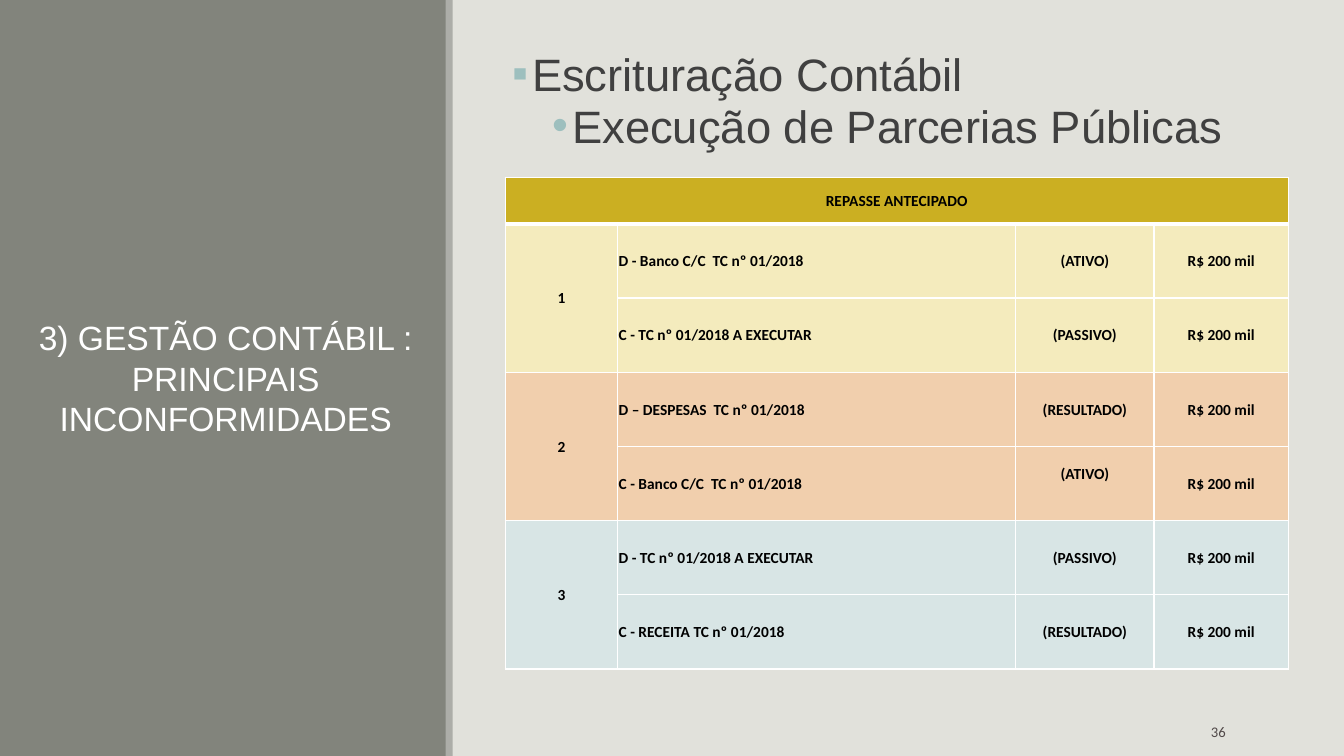
from lxml import etree
from pptx import Presentation
from pptx.dml.color import RGBColor
from pptx.enum.shapes import MSO_SHAPE
from pptx.enum.text import MSO_ANCHOR, PP_ALIGN
from pptx.oxml.ns import qn
from pptx.util import Cm, Pt

RECTANGLE = MSO_SHAPE.RECTANGLE
TOP, MIDDLE = MSO_ANCHOR.TOP, MSO_ANCHOR.MIDDLE
LEFT, CENTER, RIGHT = PP_ALIGN.LEFT, PP_ALIGN.CENTER, PP_ALIGN.RIGHT
JUSTIFY = PP_ALIGN.JUSTIFY

COLUMN_WIDTHS = [2.84, 10.03, 3.48, 3.39]
HEADER_HEIGHT, ENTRY_HEIGHT = 1.17, 1.87
AMOUNT = "R$ 200 mil"
GROUPS = [
    ("F4EBBD", [("D - Banco C/C  TC nº 01/2018", "(ATIVO)"),
                ("C - TC nº 01/2018 A EXECUTAR", "(PASSIVO)")]),
    ("F1CFAD", [("D – DESPESAS  TC nº 01/2018", "(RESULTADO)"),
                ("C - Banco C/C  TC nº 01/2018", "(ATIVO)")]),
    ("D8E5E5", [("D - TC nº 01/2018 A EXECUTAR", "(PASSIVO)"),
                ("C - RECEITA TC nº 01/2018", "(RESULTADO)")]),
]
RAISED_ROW, RAISED_COLUMN = 4, 2


def color(hex_value):
    """Turn a hex string into a colour."""
    return RGBColor.from_string(hex_value)


def style(paragraph, font_name, size, hex_value, align, bold=False):
    """Set the font and alignment of a paragraph."""
    paragraph.alignment = align
    font = paragraph.font
    font.name, font.size, font.bold = font_name, Pt(size), bold
    font.color.rgb = color(hex_value)


def add_panel(slide, left, top, width, height, fill):
    """Add a plain filled rectangle."""
    panel = slide.shapes.add_shape(RECTANGLE, Cm(left), Cm(top), Cm(width), Cm(height))
    panel.shadow.inherit = False
    panel.fill.solid()
    panel.fill.fore_color.rgb = color(fill)
    panel.line.fill.background()


def add_text_frame(slide, left, top, width, height, anchor):
    """Add a wrapping text box and return its text frame."""
    frame = slide.shapes.add_textbox(Cm(left), Cm(top), Cm(width), Cm(height)).text_frame
    frame.word_wrap = True
    frame.vertical_anchor = anchor
    return frame


def add_sidebar(slide, left, top, width, height):
    """Add the dark side panel with its edge strip and title."""
    add_panel(slide, left, top, width, height, "82847C")
    add_panel(slide, left + width - 0.02, top, 0.18, height, "ACADA8")
    frame = add_text_frame(slide, left + 0.69, top + 1.68, width - 1.25, height - 3.38, MIDDLE)
    title = frame.paragraphs[0]
    title.text = "3) GESTÃO CONTÁBIL : PRINCIPAIS INCONFORMIDADES"
    style(title, "Arial", 24, "FFFFFF", CENTER)


def add_bullet(paragraph, symbol, indent):
    """Give a paragraph a coloured bullet with a hanging indent."""
    properties = paragraph._p.get_or_add_pPr()
    properties.set("marL", str(Cm(indent)))
    properties.set("indent", str(Cm(-0.5)))
    bullet_color = etree.SubElement(properties, qn("a:buClr"))
    etree.SubElement(bullet_color, qn("a:srgbClr"), val="9DBFBE")
    etree.SubElement(properties, qn("a:buFont"), typeface="Arial")
    etree.SubElement(properties, qn("a:buChar"), char=symbol)


def add_headings(slide, left, top, width, height):
    """Add the two bulleted heading lines."""
    frame = add_text_frame(slide, left, top, width, height, TOP)
    frame.margin_left = frame.margin_right = 0
    headings = [("Escrituração Contábil", "▪", 1.07, 1),
                ("Execução de Parcerias Públicas", "•", 2.08, 3)]
    for index, (wording, symbol, indent, level) in enumerate(headings):
        heading = frame.add_paragraph() if index else frame.paragraphs[0]
        heading.text = wording
        heading.level = level - 1
        heading.line_spacing = 0.8
        heading.space_before, heading.space_after = Pt(2), Pt(4)
        style(heading, "Arial", 32.4, "404040", JUSTIFY)
        add_bullet(heading, symbol, indent)


def add_border(cell, side, points):
    """Draw one white border of a cell."""
    border = etree.SubElement(cell._tc.get_or_add_tcPr(), qn("a:" + side), w=str(Pt(points)))
    fill = etree.SubElement(border, qn("a:solidFill"))
    etree.SubElement(fill, qn("a:srgbClr"), val="FFFFFF")


def fill_cell(cell, wording, fill, align, top_border=1, bottom_border=1):
    """Write and format one table cell."""
    for side, points in (("lnL", 1), ("lnR", 1), ("lnT", top_border), ("lnB", bottom_border)):
        add_border(cell, side, points)
    cell.fill.solid()
    cell.fill.fore_color.rgb = color(fill)
    cell.margin_left = cell.margin_right = cell.margin_top = Cm(0.02)
    cell.margin_bottom = 0
    cell.vertical_anchor = MIDDLE
    cell.text = wording
    style(cell.text_frame.paragraphs[0], "Calibri", 11, "000000", align, bold=True)


def add_entries_table(slide, left, top):
    """Add the table of accounting entries, two rows to each group."""
    row_heights = [HEADER_HEIGHT] + [ENTRY_HEIGHT] * 2 * len(GROUPS)
    table = slide.shapes.add_table(
        len(row_heights), len(COLUMN_WIDTHS), Cm(left), Cm(top),
        Cm(sum(COLUMN_WIDTHS)), Cm(sum(row_heights))).table
    table.first_row = table.horz_banding = False
    for column, width in zip(table.columns, COLUMN_WIDTHS):
        column.width = Cm(width)
    for row, height in zip(table.rows, row_heights):
        row.height = Cm(height)

    for column in range(len(COLUMN_WIDTHS)):
        wording = "" if column else "REPASSE ANTECIPADO"
        fill_cell(table.cell(0, column), wording, "CBAF22", CENTER, bottom_border=3)
    table.cell(0, 0).merge(table.cell(0, len(COLUMN_WIDTHS) - 1))

    for group, (fill, entries) in enumerate(GROUPS):
        first_row = 1 + 2 * group
        for offset, (account, category) in enumerate(entries):
            row = first_row + offset
            number = "" if offset else str(group + 1)
            for column, wording in enumerate((number, account, category, AMOUNT)):
                fill_cell(table.cell(row, column), wording, fill,
                          LEFT if column == 1 else CENTER, 3 if row == 1 else 1)
        table.cell(first_row, 0).merge(table.cell(first_row + 1, 0))
    table.cell(RAISED_ROW, RAISED_COLUMN).margin_bottom = Cm(0.5)


def add_page_number(slide, left, top, width, height):
    """Add the page number at the foot of the slide."""
    number = add_text_frame(slide, left, top, width, height, MIDDLE).paragraphs[0]
    number.text = "36"
    number.space_after = Pt(6)
    style(number, "Calibri", 10.5, "514949", RIGHT)


def main():
    """Build the slide and save it."""
    presentation = Presentation()
    presentation.slide_width, presentation.slide_height = Cm(33.87), Cm(19.05)
    slide = presentation.slides.add_slide(presentation.slide_layouts[6])
    slide.background.fill.solid()
    slide.background.fill.fore_color.rgb = color("E1E1DB")
    add_sidebar(slide, 0, 0, 11.25, 19.05)
    add_headings(slide, 12.34, 1.3, 20.5, 2.8)
    add_entries_table(slide, 12.73, 4.47)
    add_page_number(slide, 28.12, 17.93, 3.02, 1.02)
    presentation.save("out.pptx")


if __name__ == "__main__":
    main()
